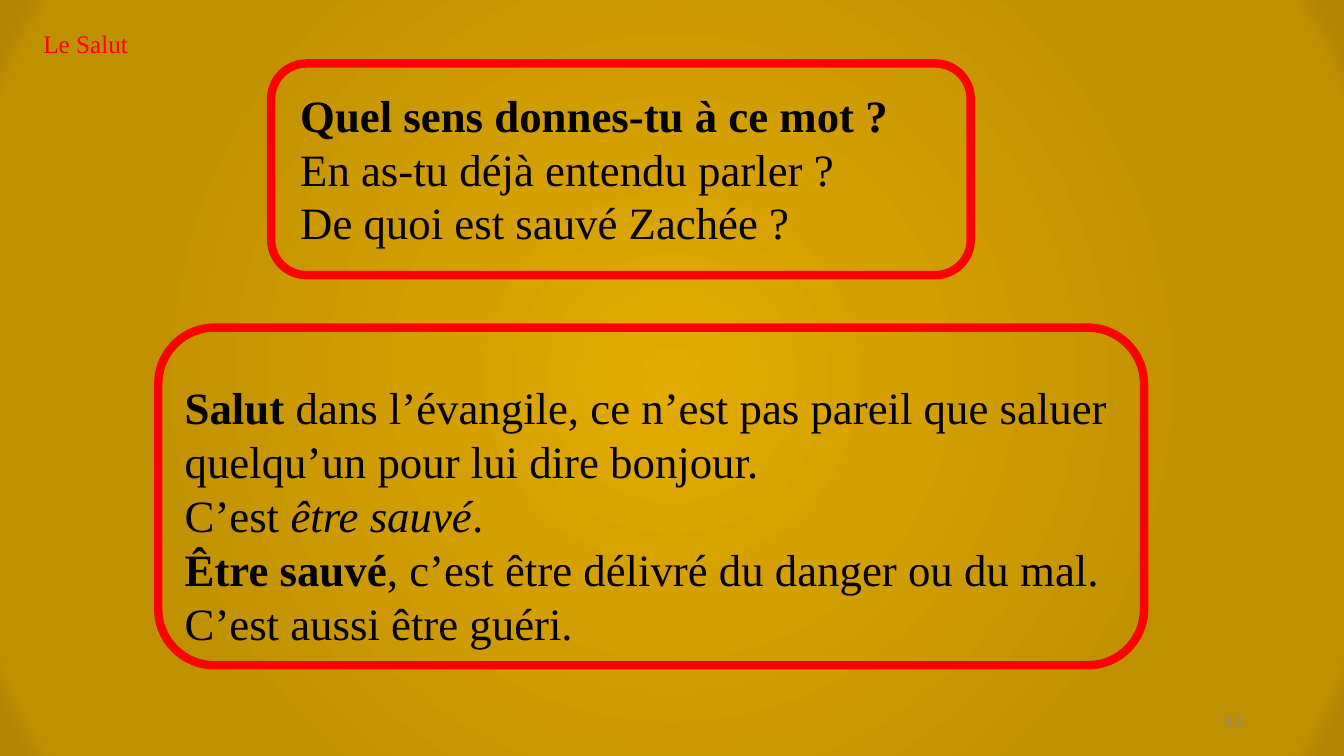
import lxml.etree
import pptx
import pptx.dml.color
import pptx.enum.shapes
import pptx.enum.text
import pptx.oxml
import pptx.oxml.ns
import pptx.util

RED = pptx.dml.color.RGBColor(0xFF, 0x00, 0x00)
BLACK = pptx.dml.color.RGBColor(0x00, 0x00, 0x00)
GREY = pptx.dml.color.RGBColor(0x8C, 0x8C, 0x8C)
AMBER = pptx.dml.color.RGBColor(0xE3, 0xAB, 0x00)
GOLD = pptx.dml.color.RGBColor(0xBF, 0x90, 0x00)
BRONZE = pptx.dml.color.RGBColor(0xB2, 0x86, 0x00)

COLUMNS, ROWS = 160, 90
ANCHOR = pptx.enum.text.MSO_ANCHOR
ALIGN = pptx.enum.text.PP_ALIGN
PLAIN, BOLD, ITALIC = "plain", "bold", "italic"


class SlideBuilder:
    font = "Times New Roman"
    body_size = 32
    frame_width = 6

    def __init__(self, deck):
        self.column = deck.slide_width / COLUMNS
        self.row = deck.slide_height / ROWS
        self.page = deck.slides.add_slide(deck.slide_layouts[5])

    def place(self, left, top, width, height):
        return (round(left * self.column), round(top * self.row),
                round(width * self.column), round(height * self.row))

    def background(self, stops):
        self.page.background.fill.gradient()
        gradient = self.page.element.find(".//" + pptx.oxml.ns.qn("a:gradFill"))
        for child in list(gradient):
            gradient.remove(child)
        stop_list = lxml.etree.SubElement(gradient, pptx.oxml.ns.qn("a:gsLst"))
        for percent, color in stops:
            stop = lxml.etree.SubElement(stop_list, pptx.oxml.ns.qn("a:gs"), pos=str(percent * 1000))
            lxml.etree.SubElement(stop, pptx.oxml.ns.qn("a:srgbClr"), val=str(color))
        circle = lxml.etree.SubElement(gradient, pptx.oxml.ns.qn("a:path"), path="circle")
        lxml.etree.SubElement(circle, pptx.oxml.ns.qn("a:fillToRect"),
                              l="50000", t="50000", r="50000", b="50000")

    def add_spans(self, shape, paragraphs, size=body_size, color=BLACK, font=font,
                  align=ALIGN.LEFT, anchor=ANCHOR.TOP, wrap=True):
        frame = shape.text_frame
        frame.word_wrap = wrap
        frame.auto_size = pptx.enum.text.MSO_AUTO_SIZE.NONE
        frame.vertical_anchor = anchor
        for index, spans in enumerate(paragraphs):
            para = frame.paragraphs[0] if index == 0 else frame.add_paragraph()
            para.alignment = align
            para.line_spacing = 1.0
            for text, look in spans:
                if text == "\n":
                    para.add_line_break()
                    continue
                span = para.add_run()
                span.text = text
                span.font.name = font
                span.font.size = pptx.util.Pt(size)
                span.font.color.rgb = color
                span.font.bold = look == BOLD
                span.font.italic = look == ITALIC

    def title(self, area, text, size, color):
        title = self.page.shapes.title
        title.left, title.top, title.width, title.height = self.place(*area)
        self.add_spans(title, [[(text, PLAIN)]], size, color, wrap=False)

    def text(self, area, paragraphs, **style):
        box = self.page.shapes.add_textbox(*self.place(*area))
        self.add_spans(box, paragraphs, **style)
        return box

    def frame(self, area):
        shape = self.page.shapes.add_shape(
            pptx.enum.shapes.MSO_SHAPE.ROUNDED_RECTANGLE, *self.place(*area))
        shape.shadow.inherit = False
        shape.fill.background()
        shape.line.color.rgb = RED
        shape.line.width = pptx.util.Pt(self.frame_width)
        return shape

    def group(self, shapes):
        self.page.shapes.add_group_shape(shapes)


def main():
    deck = pptx.Presentation()
    deck.slide_width = pptx.util.Inches(13.33)
    deck.slide_height = pptx.util.Inches(7.5)
    slide = SlideBuilder(deck)

    slide.background([(0, AMBER), (73, GOLD), (94, GOLD), (97, BRONZE)])
    slide.text((113.04, 83.4, 36, 4.8), [[("53", PLAIN)]], size=12, color=GREY,
               font="Calibri", align=ALIGN.RIGHT, anchor=ANCHOR.MIDDLE)
    slide.title((3.96, 2.76, 12.96, 4.8), "Le Salut", 18, RED)

    question_frame = slide.frame((32.28, 7.56, 83.28, 25.2))
    questions = slide.text((34.56, 9.84, 76.08, 20.64), [
        [("Quel sens donnes-tu à ce mot ?", BOLD)],
        [("En as-tu déjà entendu parler ?", PLAIN)],
        [("De quoi est sauvé Zachée ?", PLAIN)],
    ])
    slide.group([question_frame, questions])

    answer = slide.frame((18.84, 39, 117.36, 40.2))
    answer.text_frame.margin_top = round(4.3 * slide.row)
    slide.add_spans(answer, [
        [("Salut ", BOLD),
         ("dans l’évangile, ce n’est pas pareil que saluer quelqu’un pour lui dire bonjour. ", PLAIN),
         ("\n", PLAIN), ("C’est", PLAIN), (" être sauvé", ITALIC), (".", PLAIN)],
        [("Être sauvé", BOLD), (", c’est être délivré du danger ou du mal.", PLAIN)],
        [("C’est aussi être guéri.", PLAIN)],
    ])

    deck.save("out.pptx")


if __name__ == "__main__":
    main()
